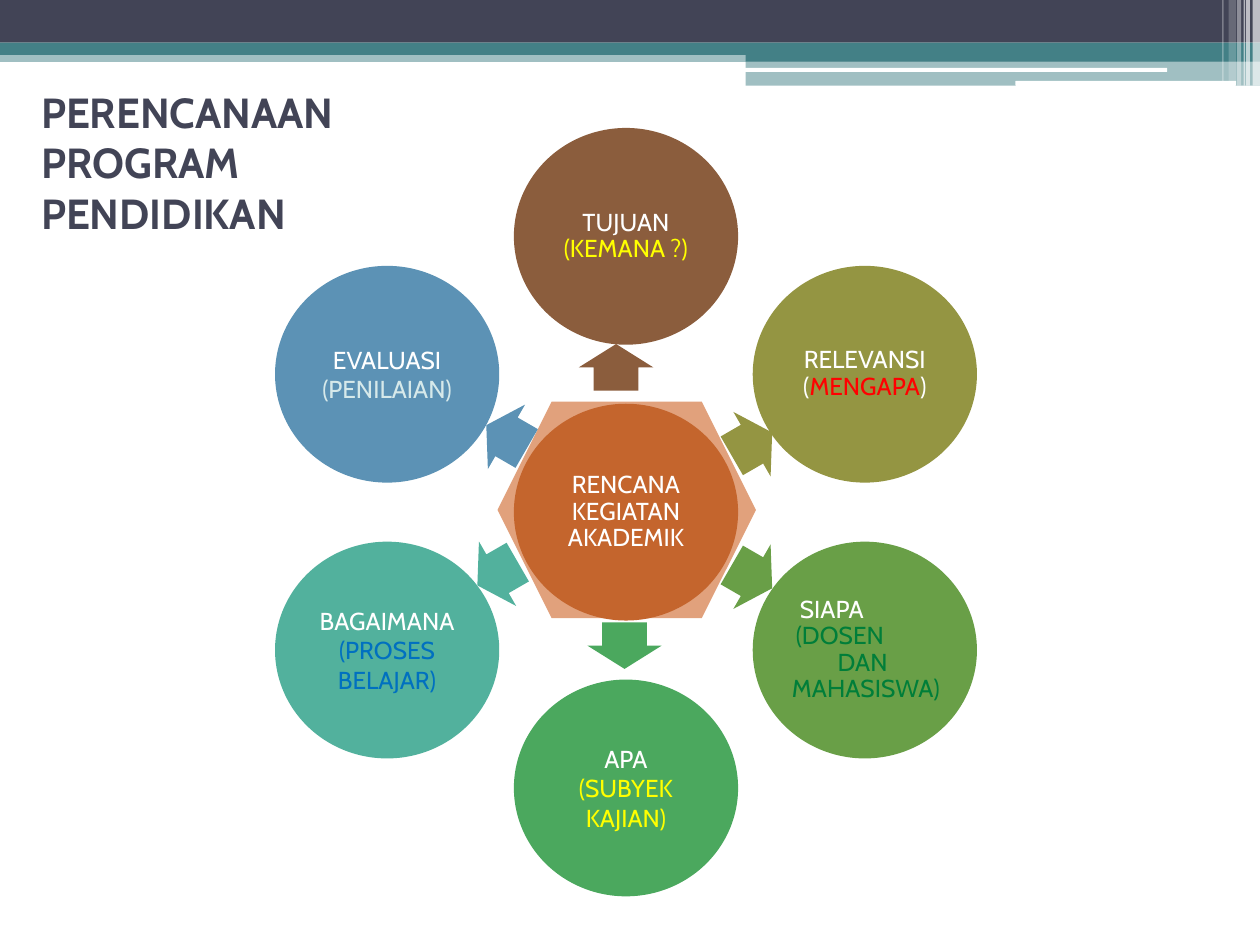
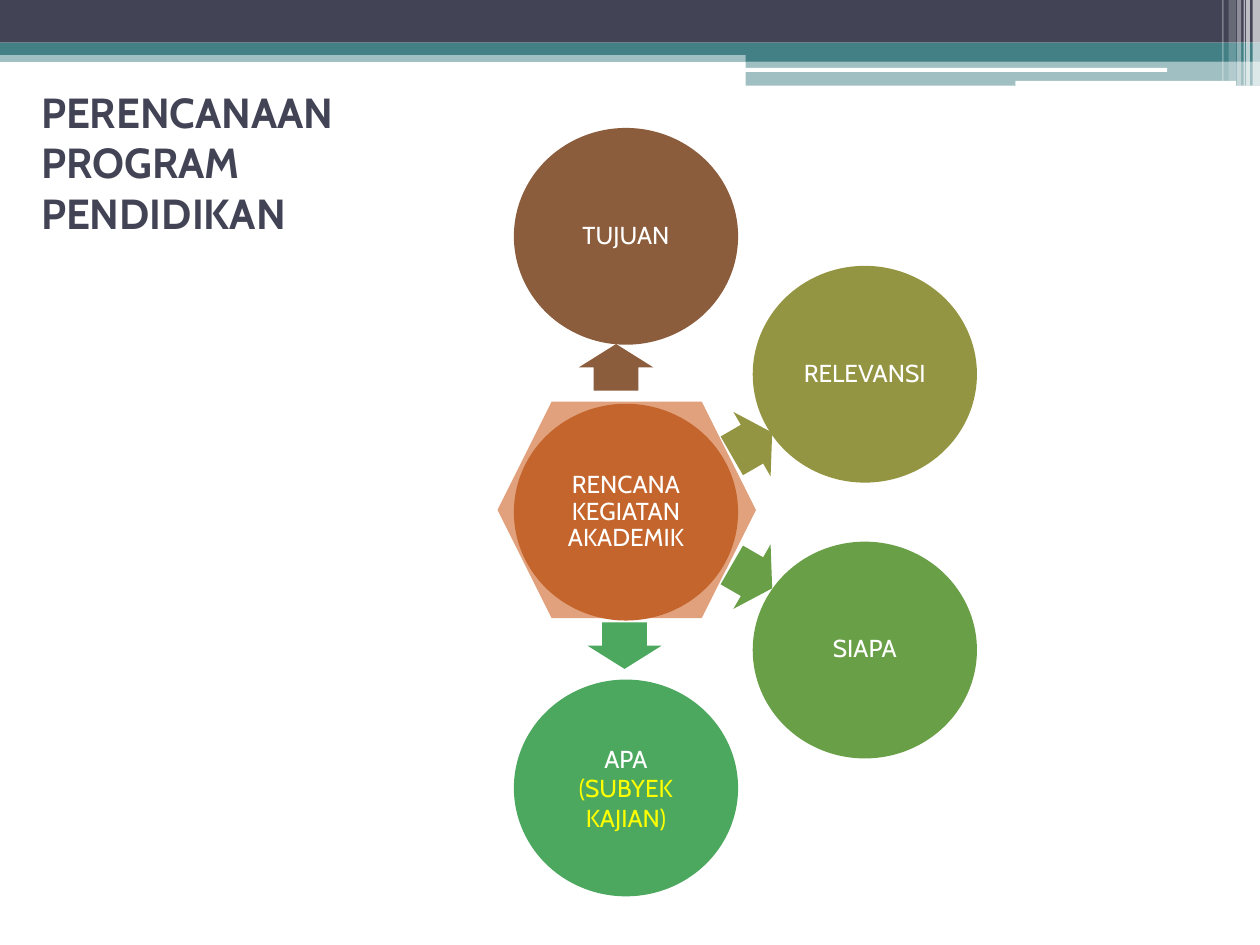
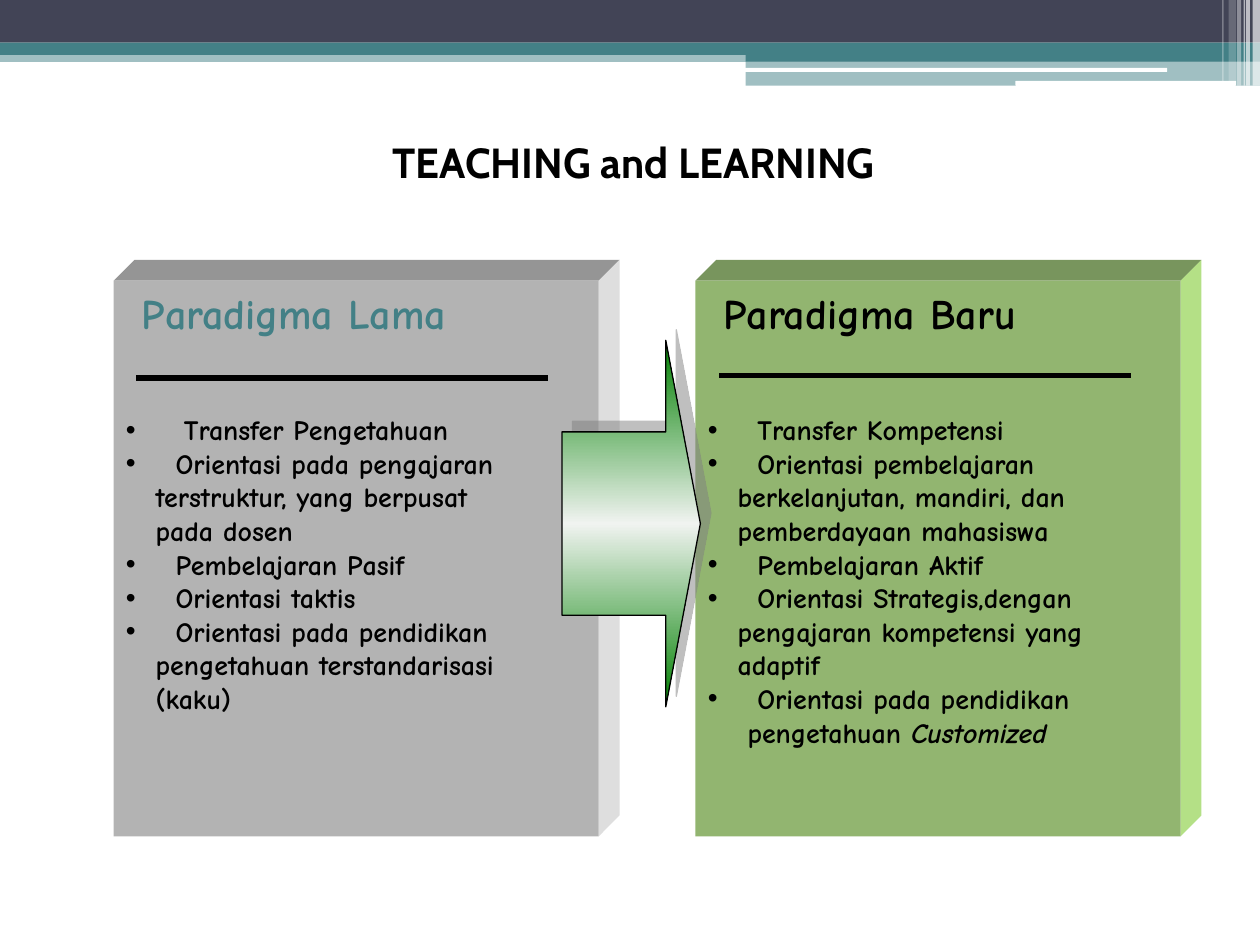
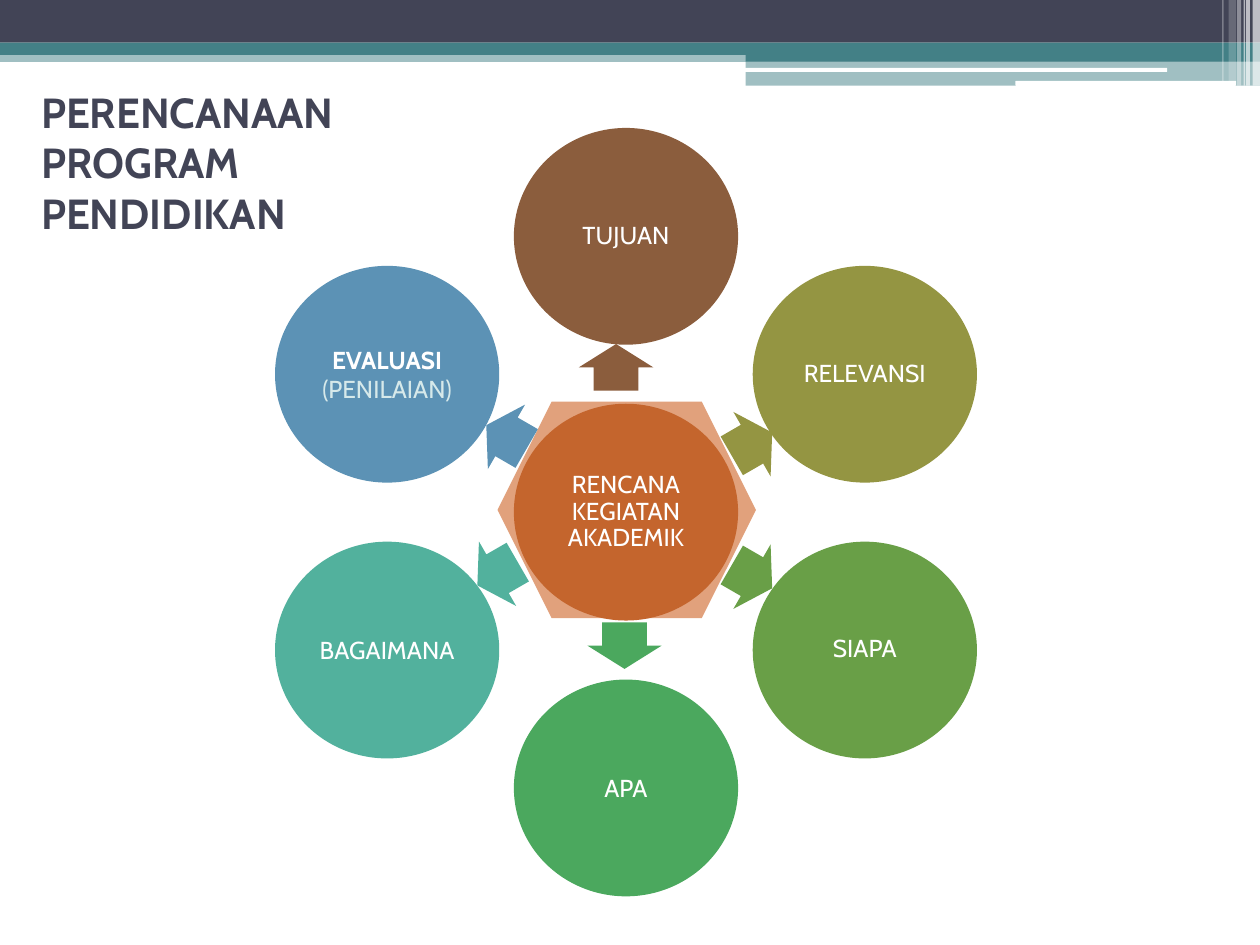
from math import cos, radians, sin

from lxml.etree import SubElement
from pptx import Presentation
from pptx.dml.color import RGBColor
from pptx.enum.shapes import MSO_CONNECTOR, MSO_SHAPE
from pptx.enum.text import MSO_ANCHOR, PP_ALIGN
from pptx.oxml import parse_xml
from pptx.oxml.ns import nsdecls, qn
from pptx.util import Cm, Pt

# Shared look
WIDE, HIGH = 25.4, 19.05
SANS, COMIC = "Cabin", "Comic Neue"
INK, TEAL, WHITE, BLACK = "424456", "438086", "FFFFFF", "000000"
YELLOW, RED, PINE, BLUE, PALE = "FFFF00", "FF0000", "007E39", "0070C0", "D6E9EA"
LEFT, MID = PP_ALIGN.LEFT, PP_ALIGN.CENTER

# Banner parts: left, top, width, height, colour, opacity, rounded
BANNER = [
    (0, 1.02, WIDE, 0.23, TEAL, 50, False),
    (0, 0, WIDE, 0.86, INK, 100, False),
    (0, 0.86, WIDE, 0.25, TEAL, 100, False),
    (15.03, 0.99, 10.37, 0.25, TEAL, 100, False),
    (15.03, 1.23, 10.37, 0.5, TEAL, 50, False),
    (15.01, 1.37, 8.52, 0.08, WHITE, 100, True),
    (20.47, 1.63, 4.45, 0.1, WHITE, 100, True),
    (25.25, 0, 0.15, 1.73, WHITE, 65, False),
    (25.12, 0, 0.08, 1.73, WHITE, 65, False),
    (25.07, 0, 0.03, 1.73, WHITE, 60, False),
    (24.94, 0, 0.08, 1.73, WHITE, 40, False),
    (24.77, 0, 0.15, 1.63, WHITE, 20, False),
    (24.64, 0, 0.03, 1.63, WHITE, 30, False),
]

# Wheel nodes: angle, colour, arrow centre from the hub
NODES = {
    "aim": (270, "8B5D3D", (-0.2, -2.92)),
    "why": (330, "949542", (2.54, -1.37)),
    "who": (30, "699F47", (2.54, 1.3)),
    "what": (90, "4BA85E", (-0.03, 2.69)),
    "how": (150, "52B19D", (-2.59, 1.24)),
    "test": (210, "5C92B5", (-2.41, -1.52)),
}
SPOKE, DISC = 5.56, (4.52, 4.37)
AREA = (5.56, 2.59, 14.12, 15.47)


def rgb(code):
    return RGBColor.from_string(code)


def paint(item, code, alpha=100):
    """Give a shape a plain fill, no line and no shadow."""
    item.shadow.inherit = False
    item.line.fill.background()
    item.fill.solid()
    item.fill.fore_color.rgb = rgb(code)
    if alpha < 100:
        tone = item.fill._xPr.find(".//" + qn("a:srgbClr"))
        SubElement(tone, qn("a:alpha")).set("val", str(alpha * 1000))


def shape(slide, kind, box, code, alpha=100):
    item = slide.shapes.add_shape(kind, *map(Cm, box))
    paint(item, code, alpha)
    return item


def frame(item, pad=(0.25, 0.13), anchor=MSO_ANCHOR.MIDDLE):
    body = item.text_frame
    body.word_wrap = True
    body.vertical_anchor = anchor
    body.margin_left = body.margin_right = Cm(pad[0])
    body.margin_top = body.margin_bottom = Cm(pad[1])
    return body


def text(body, runs, size=14, font=SANS, color=WHITE, bold=False,
         align=MID, space=1.0, left=0, after=0, bullet=False):
    """Add one paragraph; a run is a string or (string, changes)."""
    para = body.paragraphs[0]
    if para.runs:
        para = body.add_paragraph()
    para.alignment, para.line_spacing = align, space
    para.space_before, para.space_after = Pt(0), Pt(after)
    props = para._p.get_or_add_pPr()
    props.set("marL", str(Cm(left)))
    props.set("indent", str(-Cm(left) if bullet else 0))
    if bullet:
        SubElement(props, qn("a:buFont")).set("typeface", "Arial")
        SubElement(props, qn("a:buChar")).set("char", "•")
    for part in [runs] if isinstance(runs, str) else runs:
        words, diff = (part, {}) if isinstance(part, str) else part
        for row, line in enumerate(words.split("\n")):
            if row:
                para.add_line_break()
            run = para.add_run()
            run.text = line
            run.font.name, run.font.size = font, Pt(size)
            run.font.bold = diff.get("bold", bold)
            run.font.italic = diff.get("italic", False)
            run.font.color.rgb = rgb(diff.get("color", color))


def banner(slide):
    for *box, code, alpha, soft in BANNER:
        kind = MSO_SHAPE.ROUNDED_RECTANGLE if soft else MSO_SHAPE.RECTANGLE
        shape(slide, kind, box, code, alpha)


def head(slide, box, words, **form):
    body = frame(slide.shapes.add_textbox(*map(Cm, box)))
    text(body, words, size=24, bold=True, **form)


def disc(slide, mid, code, paras, pad=0.05, **form):
    """Draw a labelled circle around its centre."""
    wide, high = DISC
    box = (mid[0] - wide / 2, mid[1] - high / 2, wide, high)
    body = frame(shape(slide, MSO_SHAPE.OVAL, box, code), (pad, 0.05))
    for runs, extra in paras:
        text(body, runs, **{**form, **extra})


def wheel(slide, box, labels):
    """Hub with an arrow and a circle for each label."""
    x, y = box[0] + box[2] / 2, box[1] + box[3] / 2
    shape(slide, MSO_SHAPE.HEXAGON, (x - 2.59, y - 2.23, 5.21, 4.37), "E1A17C")
    disc(slide, (x, y), "C4652D", [("RENCANA KEGIATAN AKADEMIK", {})], space=0.9)
    for name, (paras, form) in labels.items():
        angle, code, (dx, dy) = NODES[name]
        spot = (x + dx - 0.47, y + dy - 0.75, 0.94, 1.5)
        arrow = shape(slide, MSO_SHAPE.RIGHT_ARROW, spot, code)
        arrow.adjustments[0], arrow.adjustments[1] = 0.6, 0.5
        arrow.rotation = angle
        turn = radians(angle)
        mid = (x + SPOKE * cos(turn), y + SPOKE * sin(turn))
        disc(slide, mid, code, paras, **form)


def plan(slide, labels):
    banner(slide)
    wheel(slide, AREA, labels)
    head(slide, (0.58, 1.78, 9.93, 2.97), "PERENCANAAN\nPROGRAM\nPENDIDIKAN",
         color=INK, align=LEFT)


def face(slide, points, code):
    pen = slide.shapes.build_freeform(*map(Cm, points[0]), scale=1.0)
    pen.add_line_segments([tuple(map(Cm, spot)) for spot in points[1:]])
    paint(pen.convert_to_shape(), code)


def block(slide, box, tones, title, color, rule, items):
    """Raised panel: heading, rule and bulleted list."""
    x, y, wide, high = box
    end, base, deep = x + wide, y + high, 0.42
    front, top, side = tones
    face(slide, [(x, y), (x + deep, y - deep), (end + deep, y - deep), (end, y)], top)
    face(slide, [(end, y), (end + deep, y - deep), (end + deep, base - deep),
                 (end, base)], side)
    panel = shape(slide, MSO_SHAPE.RECTANGLE, box, front)
    body = frame(panel, anchor=MSO_ANCHOR.TOP)
    form = dict(font=COMIC, bold=True, align=LEFT)
    text(body, title, size=24, color=color, left=0.32, after=43, **form)
    for runs, left, bullet in items:
        text(body, runs, size=16, color=BLACK, left=left, bullet=bullet, **form)
    # Rule below the heading
    start, drop = rule
    ends = (x + start, y + drop, x + start + 8.3, y + drop)
    line = slide.shapes.add_connector(MSO_CONNECTOR.STRAIGHT, *map(Cm, ends))
    line.line.color.rgb, line.line.width = rgb(BLACK), Pt(3)
    SubElement(line._element.spPr, qn("a:effectLst"))


def shift(slide, box):
    """Glossy arrow with a shadow."""
    arrow = shape(slide, MSO_SHAPE.RIGHT_ARROW, box, WHITE)
    arrow.adjustments[0], arrow.adjustments[1] = 0.5, 0.25
    arrow.line.color.rgb, arrow.line.width = rgb(BLACK), Pt(0.75)
    stops = "".join(
        f'<a:gs pos="{spot * 1000}"><a:srgbClr val="{code}"/></a:gs>'
        for spot, code in [(0, "008000"), (50, "F0F3F0"), (100, "008000")])
    props = arrow._element.spPr
    props.replace(props.find(qn("a:solidFill")), parse_xml(
        f'<a:gradFill {nsdecls("a")}><a:gsLst>{stops}</a:gsLst>'
        '<a:lin ang="5400000" scaled="0"/></a:gradFill>'))
    props.find(qn("a:effectLst")).append(parse_xml(
        f'<a:outerShdw {nsdecls("a")} dist="{Pt(8.5)}" dir="18900000" '
        'algn="ctr" rotWithShape="0"><a:srgbClr val="808080">'
        '<a:alpha val="50000"/></a:srgbClr></a:outerShdw>'))


def compare(slide):
    banner(slide)
    block(slide, (2.29, 5.66, 9.78, 11.2), ("B3B3B3", "959595", "DEDEDE"),
          "Paradigma Lama", TEAL, (0.46, 1.96), [
              ("Transfer Pengetahuan", 1.17, True),
              ("Orientasi pada pengajaran", 1, True),
              ("terstruktur, yang berpusat", 0.6, False),
              ("pada dosen", 0.6, False),
              ("Pembelajaran Pasif", 1, True),
              ("Orientasi taktis", 1, True),
              ("Orientasi pada pendidikan", 1, True),
              ("pengetahuan terstandarisasi", 0.6, False),
              ("(kaku)", 0.6, False)])
    block(slide, (14.02, 5.66, 9.78, 11.2), ("92B570", "78955D", "B4E086"),
          "Paradigma Baru", BLACK, (0.48, 1.91), [
              ("Transfer Kompetensi", 1, True),
              ("Orientasi pembelajaran", 1, True),
              ("berkelanjutan, mandiri, dan", 0.6, False),
              ("pemberdayaan mahasiswa", 0.6, False),
              ("Pembelajaran Aktif", 1, True),
              ("Orientasi Strategis,dengan", 1, True),
              ("pengajaran kompetensi yang", 0.6, False),
              ("adaptif", 0.6, False),
              ("Orientasi pada pendidikan", 1, True),
              (["pengetahuan ", ("Customized", {"italic": True})], 0.8, False)])
    shift(slide, (11.33, 6.86, 2.79, 7.39))
    head(slide, (2.97, 2.62, 19.61, 1.27), "TEACHING and LEARNING", color=BLACK)


def label(*runs, **form):
    return [(list(runs), {})], form


def tint(words, code, **diff):
    return words, {"color": code, **diff}


def main():
    deck = Presentation()
    deck.slide_width, deck.slide_height = Cm(WIDE), Cm(HIGH)

    # Label sets
    tight = dict(space=0.9)
    plain = {
        "aim": label("TUJUAN", **tight),
        "why": label("RELEVANSI", **tight),
        "who": label("SIAPA", **tight),
        "what": label("APA"),
        "how": label("BAGAIMANA"),
        "test": label(("EVALUASI ", {"bold": True}), tint("(PENILAIAN)", PALE)),
    }
    topic = label("APA ", tint("(SUBYEK KAJIAN)", YELLOW), pad=0.25)
    # The subject label sits near the top of its circle
    topic[0][0][1]["after"] = 20
    crew = [("SIAPA", {"left": 0.24})] + [
        (words, {"left": left, "color": PINE})
        for words, left in [("(DOSEN", 0.16), ("DAN", 1), ("MAHASISWA)", 0.08)]]
    full = {
        "aim": label("TUJUAN ", tint("(KEMANA ?)", YELLOW), **tight),
        "why": label("RELEVANSI (", tint("MENGAPA", RED), ")", **tight),
        "who": (crew, dict(align=LEFT, **tight)),
        "what": topic,
        "how": label("BAGAIMANA ", tint("(PROSES BELAJAR)", BLUE)),
        "test": label("EVALUASI ", tint("(PENILAIAN)", PALE)),
    }
    part = {name: plain[name] for name in ("aim", "why", "who")}
    part["what"] = topic

    # Slides
    pages = [lambda page: plan(page, full), lambda page: plan(page, part),
             compare, lambda page: plan(page, plain)]
    for build in pages:
        build(deck.slides.add_slide(deck.slide_layouts[6]))
    deck.save("out.pptx")


if __name__ == "__main__":
    main()
